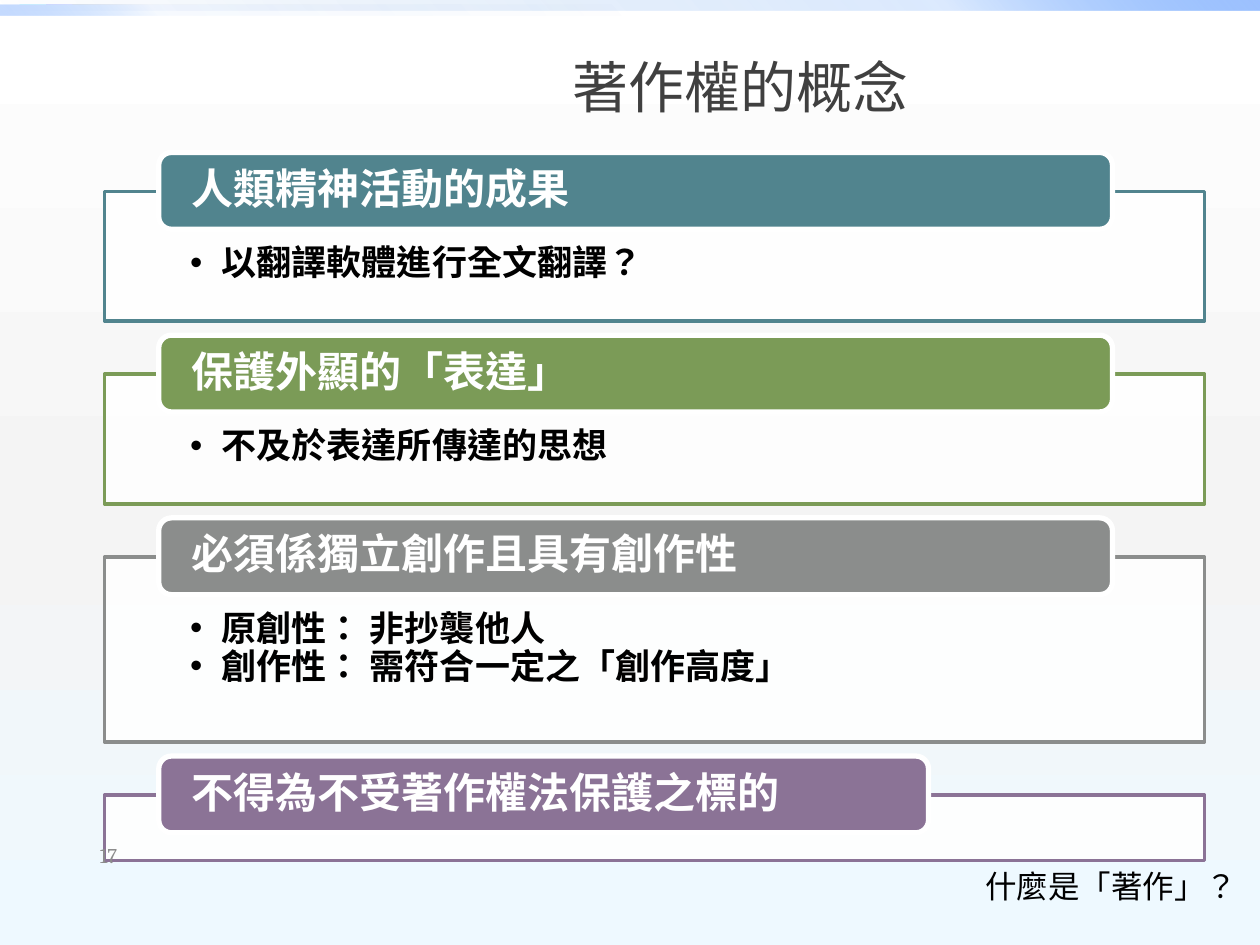
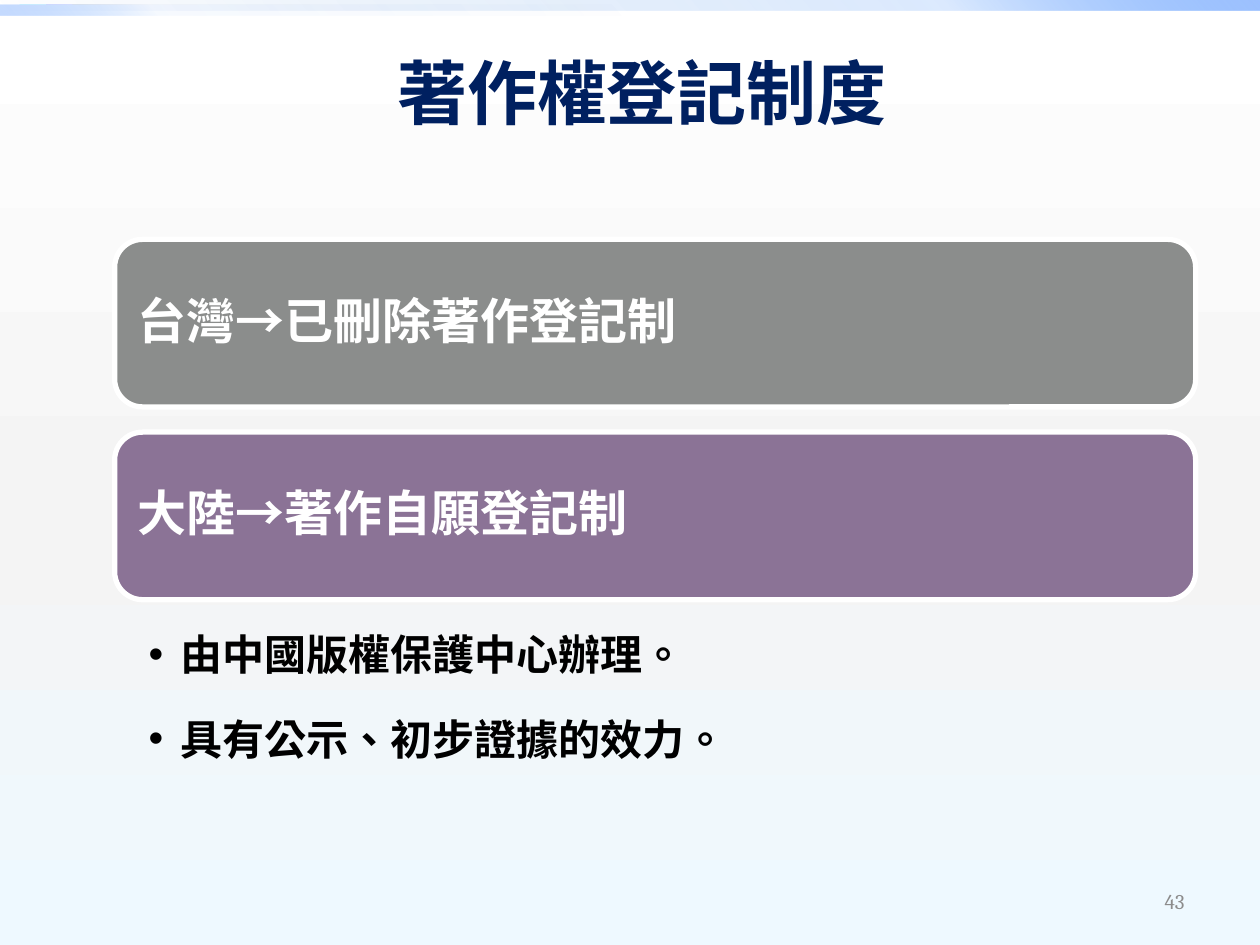
from lxml import etree
from pptx import Presentation
from pptx.dml.color import RGBColor
from pptx.enum.shapes import MSO_SHAPE
from pptx.enum.text import MSO_ANCHOR, PP_ALIGN
from pptx.oxml.ns import qn
from pptx.util import Pt

PX = 9144  # 100 px to the inch

WHITE = RGBColor(0xFF, 0xFF, 0xFF)
BLACK = RGBColor(0x00, 0x00, 0x00)
TEAL = RGBColor(0x51, 0x84, 0x8E)
GREEN = RGBColor(0x7B, 0x9B, 0x57)
GRAY = RGBColor(0x8B, 0x8D, 0x8C)
PURPLE = RGBColor(0x8B, 0x73, 0x96)
TITLE_GRAY = RGBColor(0x40, 0x40, 0x40)
NAVY = RGBColor(0x00, 0x20, 0x60)
NUMBER_GRAY = RGBColor(0x8C, 0x8C, 0x8C)
SANS, SERIF, TITLE_FONT = "Noto Sans CJK SC", "Cambria", "Arial"


def set_gradient(fill, stops, angle):
    """Fill with (position, colour, opacity) stops, angle in clockwise degrees."""
    fill.gradient()
    gradient = fill._xPr.find(qn("a:gradFill"))
    stop_list = gradient.find(qn("a:gsLst"))
    stop_list.clear()
    for position, color, opacity in stops:
        stop = etree.SubElement(stop_list, qn("a:gs"), pos=str(position * 1000))
        tint = etree.SubElement(stop, qn("a:srgbClr"), val=color)
        etree.SubElement(tint, qn("a:alpha"), val=str(opacity * 1000))
    gradient.find(qn("a:lin")).set("ang", str(angle * 60000))


def write(shape, lines, size, font, color, bold=False, align=PP_ALIGN.LEFT,
          anchor=MSO_ANCHOR.MIDDLE, insets=(10, 5, 10, 5), spacing=1.0,
          after=0, bullets=False, wrap=True):
    """Write one paragraph per line into the shape."""
    frame = shape.text_frame
    frame.word_wrap = wrap
    frame.vertical_anchor = anchor
    (frame.margin_left, frame.margin_top,
     frame.margin_right, frame.margin_bottom) = [inset * PX for inset in insets]
    for index, line in enumerate(lines):
        paragraph = frame.add_paragraph() if index else frame.paragraphs[0]
        paragraph.alignment = align
        paragraph.line_spacing = spacing
        paragraph.space_before = Pt(0)
        paragraph.space_after = Pt(after)
        if bullets:
            properties = paragraph._p.get_or_add_pPr()
            properties.set("marL", str(25 * PX))
            properties.set("indent", str(-25 * PX))
            etree.SubElement(properties, qn("a:buFont"), typeface="Arial")
            etree.SubElement(properties, qn("a:buChar"), char="•")
        run = paragraph.add_run()
        run.text = line
        run.font.size = Pt(size)
        run.font.bold = bold
        run.font.name = font
        run.font.color.rgb = color
        run_properties = run._r.get_or_add_rPr()
        run_properties.set("lang", "zh-TW")
        if font == SANS:
            etree.SubElement(run_properties, qn("a:ea"), typeface=font)


presentation = Presentation()
presentation.slide_width = 1000 * PX
presentation.slide_height = 750 * PX
master = presentation.slide_master
title_only = presentation.slide_layouts[5]

# Shared background
set_gradient(master.background.fill,
             [(0, "FFFFFF", 100), (55, "F4F4F4", 100), (100, "EEF9FF", 100)], 90)

# Slides with title and page number
slides = []
for title, title_box, size, font, color, bold, number, number_box in [
    ("著作權的概念", (138, 20, 900, 96), 32, SANS, TITLE_GRAY, False,
     "17", (36, 659, 67, 40)),
    ("著作權登記制度", (114, 21, 791, 104), 40, TITLE_FONT, NAVY, True,
     "43", (717, 695, 233, 40)),
]:
    slide = presentation.slides.add_slide(title_only)
    heading = slide.shapes.title
    heading.left, heading.top, heading.width, heading.height = [
        length * PX for length in title_box]
    write(heading, [title], size, font, color, bold, PP_ALIGN.CENTER)
    slides.append((slide, number, number_box))
concept_slide, registration_slide = [entry[0] for entry in slides]

# Shared top bands, moved to the master
for top, width, angle, opacities in [(0, 1000, 315, (0, 20, 100)),
                                     (4, 500, 135, (0, 5, 60))]:
    band = concept_slide.shapes.add_shape(
        MSO_SHAPE.RECTANGLE, 0, top * PX, width * PX, 8 * PX)
    band.shadow.inherit = False
    band.line.fill.background()
    set_gradient(band.fill, list(zip((0, 75, 100), ("0058B7", "4F95FF", "9EC2FF"),
                                     opacities)), angle)
    master.shapes.element.append(band.element)

# Concept slide: framed sections with a heading bar
section_top = 152
for heading, bullets, color, height, bar_width in [
    ("人類精神活動的成果", ["以翻譯軟體進行全文翻譯？"], TEAL, 103, 757),
    ("保護外顯的「表達」", ["不及於表達所傳達的思想"], GREEN, 103, 757),
    ("必須係獨立創作且具有創作性",
     ["原創性： 非抄襲他人", "創作性： 需符合一定之「創作高度」"], GRAY, 147, 757),
    ("不得為不受著作權法保護之標的", [], PURPLE, 52, 611),
]:
    frame_box = concept_slide.shapes.add_shape(
        MSO_SHAPE.RECTANGLE, 83 * PX, section_top * PX, 873 * PX, height * PX)
    frame_box.shadow.inherit = False
    frame_box.fill.solid()
    frame_box.fill.fore_color.rgb = WHITE
    white = frame_box.fill._xPr.find(qn("a:solidFill"))[0]
    etree.SubElement(white, qn("a:alpha"), val="90000")
    frame_box.line.color.rgb = color
    frame_box.line.width = Pt(2)
    write(frame_box, bullets, 20, SANS, BLACK, True, anchor=MSO_ANCHOR.TOP,
          insets=(68, 43, 68, 16), spacing=0.9, bullets=True)

    bar = concept_slide.shapes.add_shape(
        MSO_SHAPE.ROUNDED_RECTANGLE, 126 * PX, (section_top - 31) * PX,
        bar_width * PX, 61 * PX)
    bar.shadow.inherit = False
    bar.fill.solid()
    bar.fill.fore_color.rgb = color
    bar.line.color.rgb = WHITE
    bar.line.width = Pt(3)
    write(bar, [heading], 24, SANS, WHITE, True, insets=(23, 0, 23, 0), spacing=0.9)
    section_top += height + 42

# Concept slide: closing question
question = concept_slide.shapes.add_textbox(772 * PX, 683 * PX, 216 * PX, 40 * PX)
write(question, ["什麼是「著作」？"], 18, SERIF, BLACK, anchor=MSO_ANCHOR.TOP, wrap=False)

# Registration slide: one panel per system
for index, (system, color) in enumerate([("台灣→已刪除著作登記制", GRAY),
                                         ("大陸→著作自願登記制", PURPLE)]):
    panel = registration_slide.shapes.add_shape(
        MSO_SHAPE.ROUNDED_RECTANGLE, 91 * PX, (190 + 153 * index) * PX,
        858 * PX, 133 * PX)
    panel.shadow.inherit = False
    panel.fill.solid()
    panel.fill.fore_color.rgb = color
    panel.line.color.rgb = WHITE
    panel.line.width = Pt(3)
    write(panel, [system], 28, SERIF, WHITE, True, insets=(12, 12, 12, 12), spacing=0.9)

# Registration slide: details
details = registration_slide.shapes.add_textbox(91 * PX, 476 * PX, 858 * PX, 147 * PX)
write(details, ["由中國版權保護中心辦理。", "具有公示、初步證據的效力。"], 24, SERIF, BLACK,
      True, anchor=MSO_ANCHOR.TOP, insets=(27, 3, 19, 3), spacing=1.5, after=5,
      bullets=True)

# Page numbers
for slide, number, (left, top, width, height) in slides:
    number_box = slide.shapes.add_textbox(left * PX, top * PX, width * PX, height * PX)
    write(number_box, [number], 12, SERIF, NUMBER_GRAY, align=PP_ALIGN.RIGHT)

presentation.save("out.pptx")
